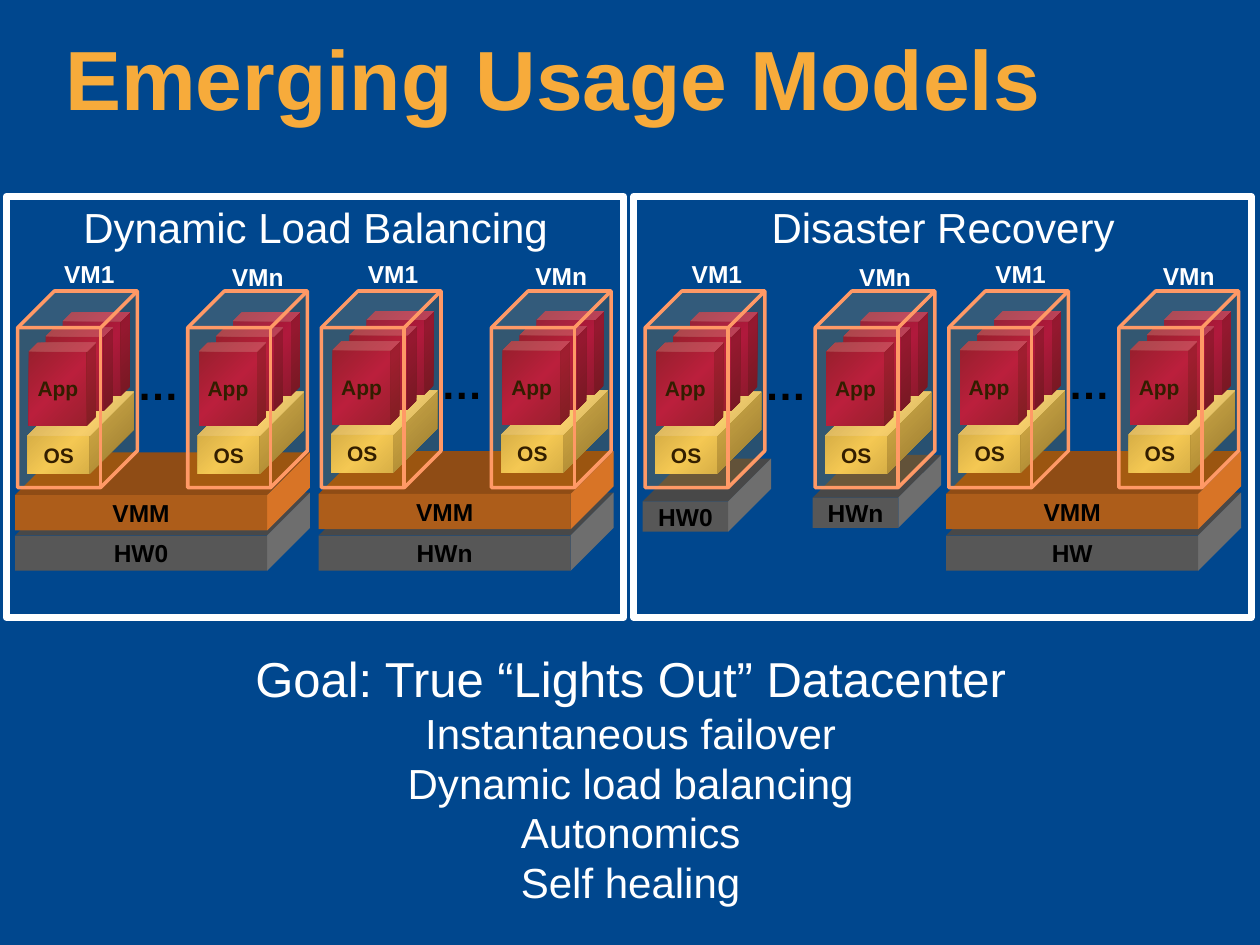
from copy import deepcopy
from lxml.etree import SubElement
from pptx import Presentation
from pptx.dml.color import RGBColor
from pptx.enum.shapes import MSO_SHAPE
from pptx.enum.text import MSO_ANCHOR, PP_ALIGN
from pptx.oxml.ns import qn
from pptx.util import Inches, Pt

COLORS = {
    "background": "00478E", "title": "F7AB3B", "white": "FFFFFF", "black": "000000",
    "glass": "FF9900", "edge": "FF9966",
}
SLABS = {
    "VMM": {"front": "AD5D1A", "top": "8F4C15", "side": "D87426"},
    "HW": {"front": "575757", "top": "484848", "side": "6E6E6E"},
}
GRADIENTS = {
    "OS": ("AD984A", "F2D468", "AD984A"),
    "App": ("7A0136", "AA014C", "7A0136"),
}
TITLE = "Emerging Usage Models"
GOAL = [
    ("Goal: True “Lights Out” Datacenter", 28),
    ("Instantaneous failover", 24),
    ("Dynamic load balancing", 24),
    ("Autonomics", 24),
    ("Self healing", 24),
]
WIDE, NARROW = (2, 0.28), (0.68, 0.24)
PANELS = [
    ("Dynamic Load Balancing", [
        [("HW", "HW0", 0, 4.25, WIDE), ("VMM", "VMM", 0, 3.93, WIDE)],
        [("HW", "HWn", 0, 4.25, WIDE), ("VMM", "VMM", 0, 3.92, WIDE)],
    ]),
    ("Disaster Recovery", [
        [("HW", "HW0", 0, 3.98, NARROW), ("HW", "HWn", 1, 3.95, NARROW)],
        [("HW", "HW", 0, 4.25, WIDE), ("VMM", "VMM", 0, 3.92, WIDE)],
    ]),
]
MACHINES = [("VM1", 0.27, 2.01, 0.6), ("VMn", 0.25, 2.03, 0.61)]
PANEL_STEP, HOST_STEP, MACHINE_STEP = 4.98, 2.41, 1.35
FIRST_MACHINE, DEPTH = 0.14, 0.34
APP_STEP = (0.135, -0.12)

presentation = Presentation()
presentation.slide_width, presentation.slide_height = Inches(10), Inches(7.5)
slide = presentation.slides.add_slide(presentation.slide_layouts[6])
slide.background.fill.solid()
slide.background.fill.fore_color.rgb = RGBColor.from_string(COLORS["background"])


def apply_format(target, values):
    for name, value in values.items():
        setattr(target, name, value)


def write(shape, lines, color, bold=False, wrap=False, anchor=MSO_ANCHOR.MIDDLE,
          align=PP_ALIGN.CENTER, spacing=1.0, gap=0):
    apply_format(shape.text_frame, {"word_wrap": wrap, "vertical_anchor": anchor})
    for index, (text, size) in enumerate(lines):
        frame = shape.text_frame
        paragraph = frame.add_paragraph() if index else frame.paragraphs[0]
        paragraph.text = text
        apply_format(paragraph, {"alignment": align, "line_spacing": spacing,
                                 "space_before": Pt(gap if index else 0)})
        apply_format(paragraph.font, {"name": "Arial", "size": Pt(size), "bold": bold})
        paragraph.font.color.rgb = RGBColor.from_string(COLORS[color])


def add_text(box, lines, color, **options):
    shape = slide.shapes.add_textbox(*map(Inches, box))
    write(shape, lines, color, **{"anchor": MSO_ANCHOR.TOP, **options})


def paint(shape, fill=None, line=None, width=0):
    shape.shadow.inherit = False
    if fill:
        shape.fill.solid()
        shape.fill.fore_color.rgb = RGBColor.from_string(fill)
    else:
        shape.fill.background()
    if line:
        shape.line.color.rgb = RGBColor.from_string(line)
        shape.line.width = Pt(width)
    else:
        shape.line.fill.background()


def add_shape(kind, box, **style):
    shape = slide.shapes.add_shape(kind, *map(Inches, box))
    paint(shape, **style)
    return shape


def add_face(points, fill):
    corners = [(Inches(x), Inches(y)) for x, y in points]
    builder = slide.shapes.build_freeform(*corners[0])
    builder.add_line_segments(corners[1:], close=True)
    paint(builder.convert_to_shape(), fill)


def add_slab(kind, label, left, top, size):
    width, height = size
    right, bottom, back = left + width, top + height, top - DEPTH
    colors = SLABS[kind]
    add_face([(left, top), (left + DEPTH, back), (right + DEPTH, back), (right, top)],
             colors["top"])
    add_face([(right, top), (right + DEPTH, back), (right + DEPTH, bottom - DEPTH),
              (right, bottom)], colors["side"])
    front = add_shape(MSO_SHAPE.RECTANGLE, (left, top, width, height), fill=colors["front"])
    write(front, [(label, 14)], "black", bold=True)


def add_cube(box, depth, kind=None, label=None, **style):
    cube = add_shape(MSO_SHAPE.CUBE, box, **style)
    cube.adjustments[0] = depth
    if kind:
        cube.fill.gradient()
        cube.fill.gradient_angle = 315
        stops = cube.fill.gradient_stops
        first = cube._element.spPr.find(qn("a:gradFill")).find(qn("a:gsLst"))[0]
        first.addnext(deepcopy(first))
        stops = cube.fill.gradient_stops
        for stop, position, color in zip(stops, (0, 0.5, 1), GRADIENTS[kind]):
            stop.position = position
            stop.color.rgb = RGBColor.from_string(color)
    if label:
        write(cube, [(label, 12)], "black", bold=True)
    return cube


def add_machine(left, rise):
    add_cube((left + 0.08, 3.11 - rise, 0.84, 0.65), 0.535, "OS", "OS")
    for step in (2, 1, 0):
        box = (left + 0.09 + step * APP_STEP[0], 2.72 - rise + step * APP_STEP[1], 0.53, 0.66)
        add_cube(box, 0.131, "App", None if step else "App")
    glass = add_cube((left, 2.31, 0.95, 1.56), 0.307, fill=COLORS["glass"],
                     line=COLORS["edge"], width=2)
    color = glass._element.spPr.find(qn("a:solidFill"))[0]
    SubElement(color, qn("a:alpha"), val="20000")


def add_host(left, slabs, rise):
    for kind, label, column, top, size in slabs:
        add_slab(kind, label, left - 0.02 + column * MACHINE_STEP, top, size)
    add_text((left + 0.85, 2.8 - rise, 0.53, 0.5), [("…", 24)], "black", bold=True)
    for column, (label, shift, top, width) in enumerate(MACHINES):
        machine_left = left + column * MACHINE_STEP
        add_text((machine_left + shift, top - rise * column, width, 0.33), [(label, 14)],
                 "white", bold=True)
        add_machine(machine_left, rise)


add_text((0.42, 0.25, 9.18, 0.82), [(TITLE, 48)], "title", bold=True, wrap=True,
         align=PP_ALIGN.LEFT, spacing=0.9)
add_text((0.5, 5.19, 9.01, 2.07), GOAL, "white", wrap=True, spacing=0.8, gap=5.5)
for panel, (heading, hosts) in enumerate(PANELS):
    offset = panel * PANEL_STEP
    add_text((0.09 + offset, 1.55, 4.83, 0.5), [(heading, 24)], "white", wrap=True)
    add_shape(MSO_SHAPE.RECTANGLE, (0.05 + offset, 1.56, 4.9, 3.34),
              line=COLORS["white"], width=4)
    for column, slabs in enumerate(hosts):
        add_host(FIRST_MACHINE + offset + column * HOST_STEP, slabs, column * 0.01)

presentation.save("out.pptx")
